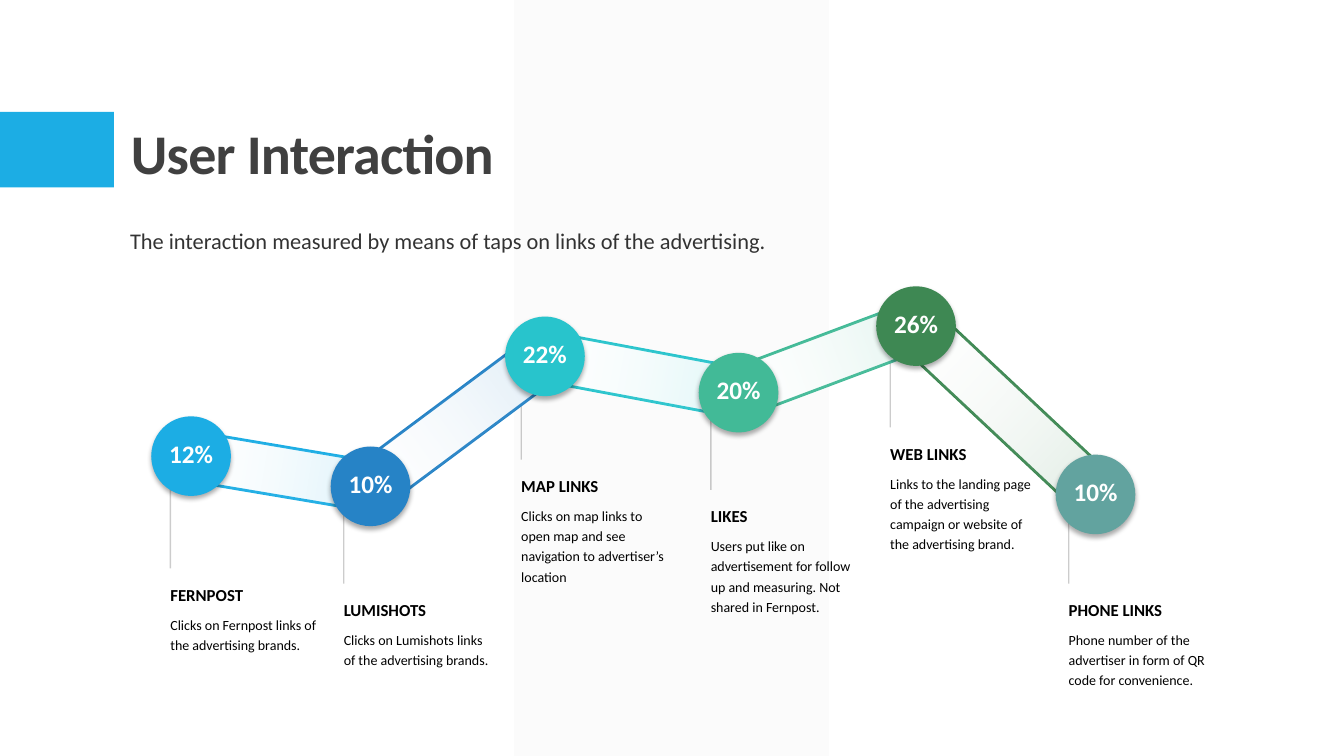
from itertools import pairwise
from math import atan2, degrees, hypot

from lxml.etree import SubElement
from pptx import Presentation
from pptx.dml.color import RGBColor
from pptx.enum.shapes import MSO_CONNECTOR as LINE, MSO_SHAPE as SHAPE
from pptx.enum.text import MSO_ANCHOR as ANCHOR, MSO_AUTO_SIZE as FIT, PP_ALIGN as ALIGN
from pptx.oxml.ns import qn
from pptx.util import Inches, Pt

CELL = Inches(0.1)
COLS, ROWS = 133.3, 75
BUBBLE = 7.9
RIBBON = 4.9
STEM_GAP = 0.7

BLACK = RGBColor(0x00, 0x00, 0x00)
WHITE = RGBColor(0xFF, 0xFF, 0xFF)
CHARCOAL = RGBColor(0x40, 0x40, 0x40)
PALE = RGBColor(0xF2, 0xF2, 0xF2)
SKY = RGBColor(0x1C, 0xAD, 0xE4)
BLUE = RGBColor(0x26, 0x83, 0xC6)
TURQUOISE = RGBColor(0x28, 0xC4, 0xCC)
MINT = RGBColor(0x42, 0xBA, 0x97)
GREEN = RGBColor(0x3E, 0x88, 0x53)
SAGE = RGBColor(0x62, 0xA3, 0x9F)


def fade(element, *opacities):
    for color, opacity in zip(element.iter(qn("a:srgbClr")), opacities):
        SubElement(color, qn("a:alpha"), val=str(opacity * 1000))


def write(frame, lines, inset=(0, 0.5), anchor=ANCHOR.TOP, **layout):
    frame.word_wrap = True
    frame.vertical_anchor = anchor
    frame.margin_left = frame.margin_right = int(inset[0] * CELL)
    frame.margin_top = frame.margin_bottom = int(inset[1] * CELL)
    for number, (words, size, bold, color) in enumerate(lines):
        paragraph = frame.add_paragraph() if number else frame.paragraphs[0]
        for key, value in layout.items():
            setattr(paragraph, key, value)
        run = paragraph.add_run()
        run.text = words
        run.font.color.rgb = color
        for key, value in {"name": "Calibri", "size": Pt(size), "bold": bold}.items():
            setattr(run.font, key, value)
    return run


deck = Presentation()
deck.slide_width, deck.slide_height = int(COLS * CELL), ROWS * CELL
slide = deck.slides.add_slide(deck.slide_layouts[6])
shapes = slide.shapes

for color, opacity, box in [
    (PALE, 30, (51, 0, 31.2, ROWS)),
    (SKY, 100, (0, 11.1, 11.3, 7.5)),
]:
    panel = shapes.add_shape(SHAPE.RECTANGLE, *(int(n * CELL) for n in box))
    panel.shadow.inherit = False
    panel.fill.solid()
    panel.fill.fore_color.rgb = color
    panel.line.fill.background()
    fade(panel.fill.fore_color._xFill, opacity)

title = shapes.add_textbox(*(int(n * CELL) for n in (12, 3.1, 110, 15.9)))
heading = write(title.text_frame, [("User Interaction", 40, True, CHARCOAL)],
                inset=(1, 0.5), anchor=ANCHOR.BOTTOM, line_spacing=0.9)
heading.font._element.set("spc", "-50")

subtitle = shapes.add_textbox(*(int(n * CELL) for n in (12.9, 22, 76.5, 12)))
summary = write(
    subtitle.text_frame,
    [("The interaction measured by means of taps on links of the advertising.", 16, False, BLACK)],
    space_before=Pt(12), space_after=Pt(2))
fade(summary.font._element, 80)

channels = [
    ("12%", SKY, (18.95, 45.25), (16.9, 57.1, 14.7, 10.1), "FERNPOST",
     "Clicks on Fernpost links of the advertising brands."),
    ("10%", BLUE, (36.75, 48.25), (34.1, 58.6, 14.7, 10.1), "LUMISHOTS",
     "Clicks on Lumishots links of the advertising brands."),
    ("22%", TURQUOISE, (54.05, 35.35), (51.7, 46.3, 14.7, 12.2), "MAP LINKS",
     "Clicks on map links to open map and see navigation to advertiser’s location"),
    ("20%", MINT, (73.25, 38.95), (70.5, 49.3, 15.3, 14.2), "LIKES",
     "Users put like on advertisement for follow up and measuring. Not shared in Fernpost."),
    ("26%", GREEN, (90.85, 32.35), (88.3, 43.1, 14.7, 12.2), "WEB LINKS",
     "Links to the landing page of the advertising campaign or website of the advertising brand."),
    ("10%", SAGE, (108.65, 49.05), (106, 58.6, 15.6, 10.1), "PHONE LINKS",
     "Phone number of the advertiser in form of QR code for convenience."),
]

for share, color, (x, y), (left, top, width, height), name, detail in channels:
    stem = shapes.add_connector(
        LINE.STRAIGHT, *(int(n * CELL) for n in (left, y, left, top - STEM_GAP)))
    stem.line.color.rgb = BLACK
    stem.line.width = Pt(1)
    fade(stem.line._ln, 20)
    SubElement(stem._element.spPr, qn("a:effectLst"))

for (_, color, (x1, y1), *_), (_, _, (x2, y2), *_) in pairwise(channels):
    length = hypot(x2 - x1, y2 - y1) + RIBBON
    box = ((x1 + x2 - length) / 2, (y1 + y2 - RIBBON) / 2, length, RIBBON)
    for tinted in (False, True):
        ribbon = shapes.add_shape(SHAPE.ROUNDED_RECTANGLE, *(int(n * CELL) for n in box))
        ribbon.adjustments[0] = 0.5
        ribbon.rotation = degrees(atan2(y2 - y1, x2 - x1))
        ribbon.shadow.inherit = False
        if tinted:
            ribbon.line.fill.background()
            ribbon.fill.gradient()
            ribbon.fill.gradient_angle = 0
            for stop, tint in zip(ribbon.fill.gradient_stops, (WHITE, color)):
                stop.color.rgb = tint
            fade(ribbon._element.spPr, 0, 20)
        else:
            ribbon.fill.solid()
            ribbon.fill.fore_color.rgb = WHITE
            ribbon.line.color.rgb = color
            ribbon.line.width = Pt(2)

for share, color, (x, y), caption_box, name, detail in channels:
    bubble = shapes.add_shape(SHAPE.OVAL, *(
        int(n * CELL) for n in (x - BUBBLE / 2, y - BUBBLE / 2, BUBBLE, BUBBLE)))
    bubble.fill.solid()
    bubble.fill.fore_color.rgb = color
    bubble.line.fill.background()
    bubble.shadow.inherit = False
    effects = bubble._element.spPr.find(qn("a:effectLst"))
    shadow = SubElement(effects, qn("a:outerShdw"), blurRad=str(Pt(3.5)), dist=str(Pt(2.2)),
                        dir="5400000", algn="t", rotWithShape="0")
    SubElement(shadow, qn("a:srgbClr"), val=str(BLACK))
    fade(shadow, 32)
    write(bubble.text_frame, [(share, 18, True, WHITE)], inset=(0, 0),
          anchor=ANCHOR.MIDDLE, alignment=ALIGN.CENTER, line_spacing=0.8)

    caption = shapes.add_textbox(*(int(n * CELL) for n in caption_box))
    write(caption.text_frame, [(name, 12, True, BLACK), (detail, 10, False, BLACK)],
          line_spacing=1.2, space_before=Pt(6))
    caption.text_frame.auto_size = FIT.SHAPE_TO_FIT_TEXT

deck.save("out.pptx")
